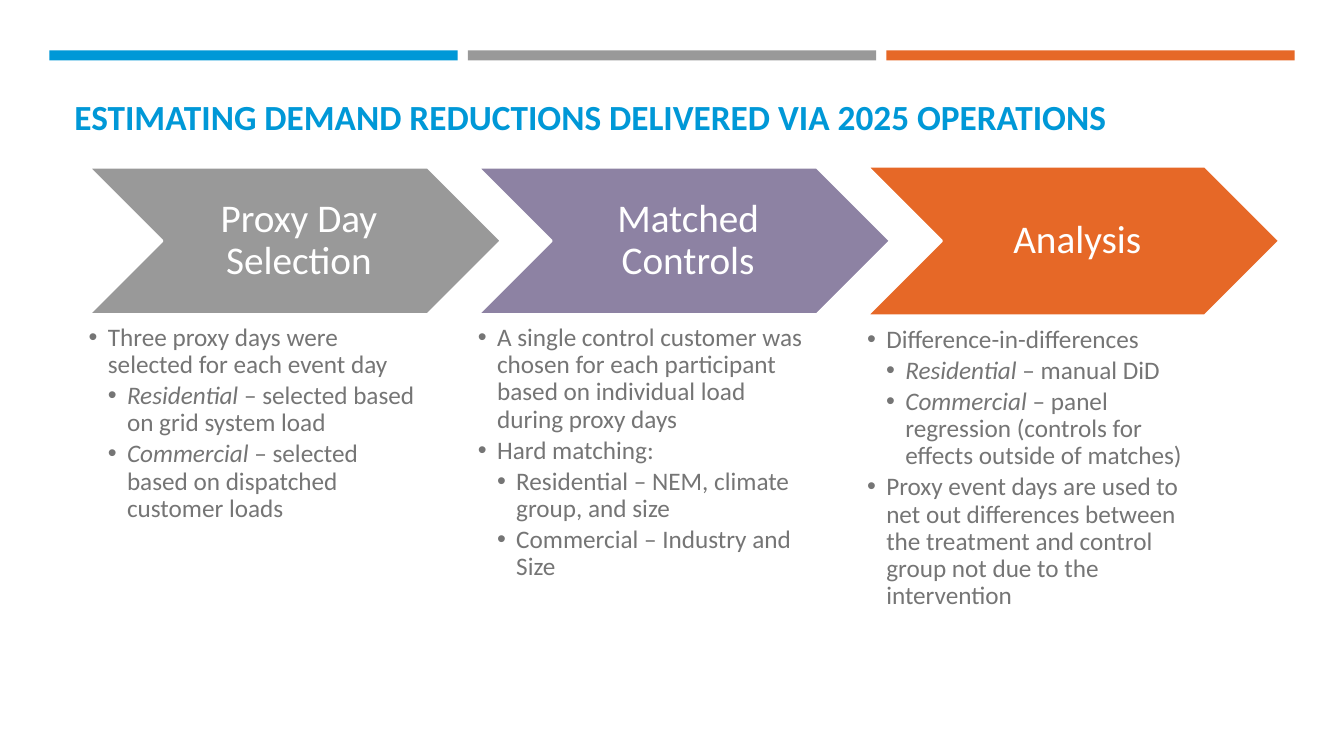
from dataclasses import dataclass

from lxml.etree import SubElement
from pptx import Presentation
from pptx.dml.color import RGBColor
from pptx.enum.shapes import MSO_SHAPE
from pptx.enum.text import MSO_ANCHOR, PP_ALIGN
from pptx.oxml.ns import qn
from pptx.shapes.autoshape import Shape
from pptx.slide import Slide
from pptx.text.text import Font, TextFrame, _Paragraph
from pptx.util import Inches, Pt

BLUE, GRAY, ORANGE, PURPLE = "0098D7", "999999", "E66827", "8D82A3"
WHITE, BODY_GRAY = "FFFFFF", "757575"
BULLET_INDENT = 0.19
COLUMN_LEFT, COLUMN_PITCH = 0.88, 3.86
BAR_LEFT, BAR_PITCH = 0.49, 4.15


@dataclass
class Bullet:
    text: str
    level: int = 1
    italic_lead: str = ""


@dataclass
class Step:
    heading: str
    color: str
    top: float
    height: float
    bullets_top: float
    bullets: list[Bullet]


STEPS = [
    Step("Proxy Day Selection", GRAY, 1.66, 1.46, 3.22, [
        Bullet("Three proxy days were selected for each event day"),
        Bullet(" – selected based on grid system load", 2, "Residential"),
        Bullet(" – selected based on dispatched customer loads", 2, "Commercial"),
    ]),
    Step("Matched Controls", PURPLE, 1.66, 1.46, 3.22, [
        Bullet("A single control customer was chosen for each participant "
               "based on individual load during proxy days"),
        Bullet("Hard matching:"),
        Bullet("Residential – NEM, climate group, and size", 2),
        Bullet("Commercial – Industry and Size", 2),
    ]),
    Step("Analysis", ORANGE, 1.65, 1.48, 3.24, [
        Bullet("Difference-in-differences"),
        Bullet(" – manual DiD", 2, "Residential"),
        Bullet(" – panel regression (controls for effects outside of matches)",
               2, "Commercial"),
        Bullet("Proxy event days are used to net out differences between the "
               "treatment and control group not due to the intervention"),
    ]),
]


def rgb(color: str) -> RGBColor:
    return RGBColor.from_string(color)


def style_font(font: Font, size: float, color: str) -> None:
    font.name = "Calibri"
    font.size = Pt(size)
    font.color.rgb = rgb(color)


def set_margins(text_frame: TextFrame, left: float, other: float) -> None:
    text_frame.margin_left = Inches(left)
    text_frame.margin_top = Inches(other)
    text_frame.margin_right = Inches(other)
    text_frame.margin_bottom = Inches(other)


def add_filled_shape(slide: Slide, kind: MSO_SHAPE, left: float, top: float,
                     width: float, height: float, color: str) -> Shape:
    shape = slide.shapes.add_shape(
        kind, Inches(left), Inches(top), Inches(width), Inches(height))
    shape.shadow.inherit = False
    shape.fill.solid()
    shape.fill.fore_color.rgb = rgb(color)
    shape.line.fill.background()
    return shape


def add_text_box(slide: Slide, left: float, top: float,
                 width: float, height: float) -> TextFrame:
    text_frame = slide.shapes.add_textbox(
        Inches(left), Inches(top), Inches(width), Inches(height)).text_frame
    text_frame.word_wrap = True
    return text_frame


def add_title(slide: Slide) -> None:
    text_frame = add_text_box(slide, 0.64, 0.77, 12.06, 0.64)
    text_frame.vertical_anchor = MSO_ANCHOR.BOTTOM
    text_frame.text = "ESTIMATING DEMAND REDUCTIONS DELIVERED VIA 2025 OPERATIONS"
    font = text_frame.paragraphs[0].runs[0].font
    style_font(font, 25.2, BLUE)
    font.bold = True


def add_chevron(slide: Slide, step: Step, left: float) -> None:
    chevron = add_filled_shape(slide, MSO_SHAPE.CHEVRON, left, step.top,
                               4.09, step.height, step.color)
    chevron.line.color.rgb = rgb(WHITE)
    chevron.line.width = Pt(1.75)
    text_frame = chevron.text_frame
    text_frame.word_wrap = True
    text_frame.vertical_anchor = MSO_ANCHOR.MIDDLE
    set_margins(text_frame, 0.12, 0.04)
    text_frame.text = step.heading
    paragraph = text_frame.paragraphs[0]
    paragraph.alignment = PP_ALIGN.CENTER
    paragraph.line_spacing = 0.9
    style_font(paragraph.runs[0].font, 28, WHITE)


def write_bullet(paragraph: _Paragraph, bullet: Bullet) -> None:
    paragraph.text = bullet.italic_lead or bullet.text
    if bullet.italic_lead:
        paragraph.runs[0].font.italic = True
        paragraph.add_run().text = bullet.text
    paragraph.level = bullet.level
    paragraph.line_spacing = 0.9
    paragraph.space_after = Pt(2.7)
    properties = paragraph._p.get_or_add_pPr()
    properties.set("marL", str(Inches(BULLET_INDENT * bullet.level)))
    properties.set("indent", str(-Inches(BULLET_INDENT)))
    SubElement(properties, qn("a:buFont"), typeface="Arial")
    SubElement(properties, qn("a:buChar"), char="•")
    for run in paragraph.runs:
        style_font(run.font, 18, BODY_GRAY)


def add_bullets(slide: Slide, step: Step, left: float) -> None:
    text_frame = add_text_box(slide, left, step.bullets_top, 3.28, 2.95)
    set_margins(text_frame, 0, 0)
    for index, bullet in enumerate(step.bullets):
        paragraph = text_frame.add_paragraph() if index else text_frame.paragraphs[0]
        write_bullet(paragraph, bullet)


def main() -> None:
    presentation = Presentation()
    presentation.slide_width = Inches(13.33)
    presentation.slide_height = Inches(7.5)
    slide = presentation.slides.add_slide(presentation.slide_layouts[6])

    for index, color in enumerate((BLUE, GRAY, ORANGE)):
        add_filled_shape(slide, MSO_SHAPE.RECTANGLE,
                         BAR_LEFT + index * BAR_PITCH, 0.5, 4.05, 0.1, color)
    add_title(slide)
    for index, step in enumerate(STEPS):
        left = COLUMN_LEFT + index * COLUMN_PITCH
        add_chevron(slide, step, left)
        add_bullets(slide, step, left)

    presentation.save("out.pptx")


if __name__ == "__main__":
    main()
